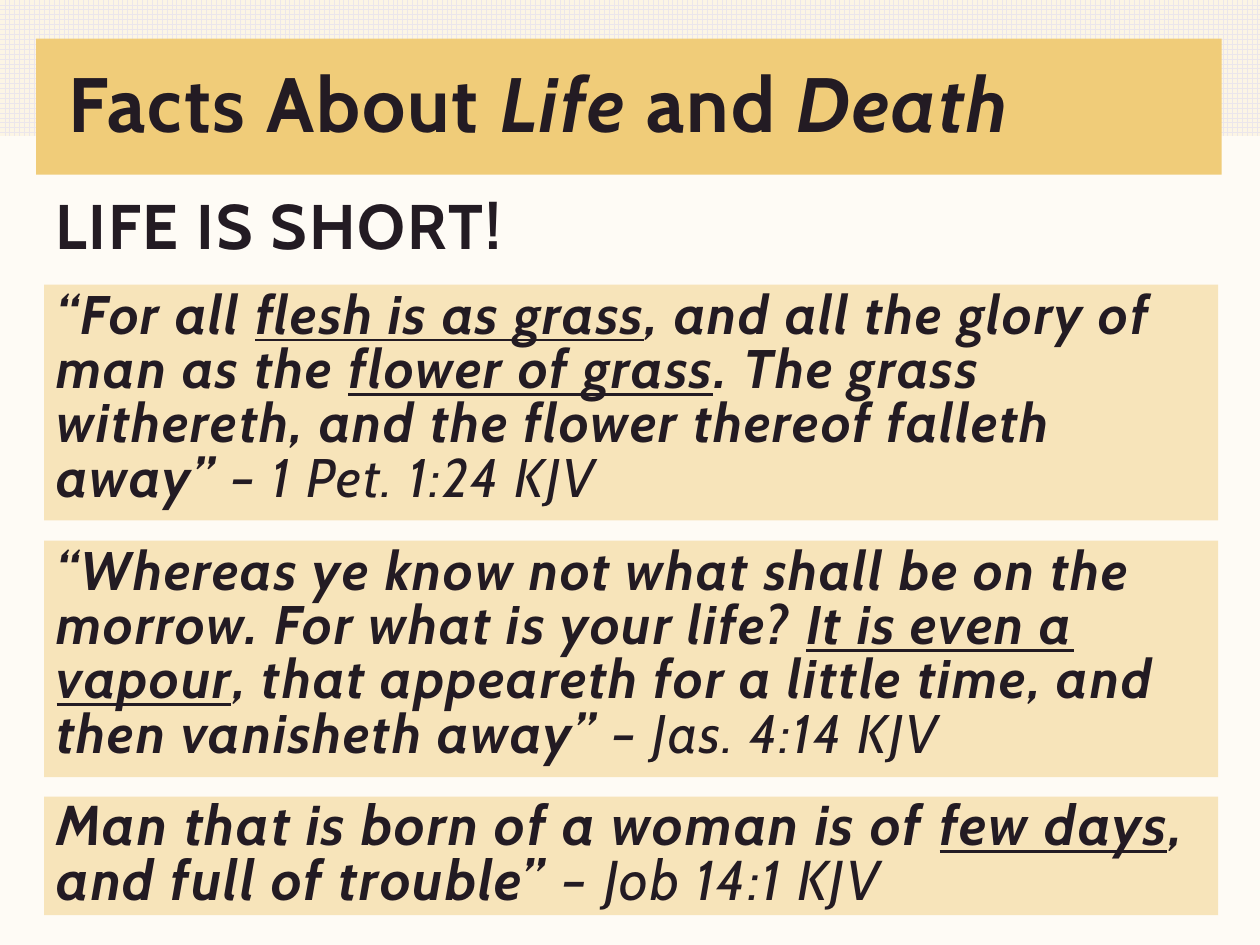
from dataclasses import dataclass

from pptx import Presentation
from pptx.dml.color import RGBColor
from pptx.enum.dml import MSO_PATTERN
from pptx.enum.shapes import MSO_SHAPE
from pptx.enum.text import MSO_ANCHOR, MSO_AUTO_SIZE, PP_ALIGN
from pptx.util import Cm, Pt


@dataclass(frozen=True)
class Theme:
    font: str = "Cabin"
    ink: str = "231B23"
    page: str = "FEFBF5"
    grid: str = "EBE6EB"
    cream: str = "FCF5E5"
    gold: str = "F0CC79"
    sand: str = "F7E4BA"
    title: int = 44
    head: int = 36
    verse: int = 31
    large: int = 32
    track: int = 110


THEME = Theme()

BOLD = {"bold": True}
SLANT = {"bold": True, "italic": True}
LINED = {**SLANT, "underline": True}
CITE = {"bold": False, "italic": True}

TITLE = [("Facts About ", BOLD), ("Life", SLANT), (" and ", BOLD), ("Death", SLANT)]
HEAD = [("LIFE IS SHORT!", BOLD)]

# top, height, type size, runs
VERSES = [
    (5.74, 4.75, THEME.verse, [
        ("“For all ", SLANT),
        ("flesh is as grass", LINED),
        (", and all the glory of man as the ", SLANT),
        ("flower of grass", LINED),
        (". The grass withereth, and the flower thereof falleth away” ", SLANT),
        ("– 1 Pet. 1:24 KJV", CITE),
    ]),
    (10.9, 4.77, THEME.verse, [
        ("“Whereas ye know not what shall be on the morrow. "
         "For what is your life? ", SLANT),
        ("It is even a vapour", LINED),
        (", that appeareth for a little time, and then vanisheth away” ", SLANT),
        ("– Jas. 4:14 KJV", CITE),
    ]),
    (16.06, 2.39, THEME.large, [
        ("Man that is born of a woman is of ", SLANT),
        ("few days", LINED),
        (", and full of trouble” ", SLANT),
        ("– Job 14:1 KJV", CITE),
    ]),
]


def tint(name):
    return RGBColor.from_string(name)


def assign(item, values):
    for key, value in values.items():
        setattr(item, key, value)


def write(shape, runs, size, anchor=MSO_ANCHOR.TOP, **layout):
    """Fill a shape with one left-aligned paragraph of styled runs."""
    frame = shape.text_frame
    assign(frame, {"word_wrap": True, "auto_size": MSO_AUTO_SIZE.NONE,
                   "vertical_anchor": anchor})
    para = frame.paragraphs[0]
    assign(para, {"alignment": PP_ALIGN.LEFT, **layout})
    for text, style in runs:
        run = para.add_run()
        run.text = text
        assign(run.font, {"name": THEME.font, "size": Pt(size), **style})
        run.font.color.rgb = tint(THEME.ink)
        run.font._element.set("spc", str(THEME.track))


def panel(slide, box, color):
    shape = slide.shapes.add_shape(MSO_SHAPE.RECTANGLE, *map(Cm, box))
    shape.shadow.inherit = False
    shape.line.fill.background()
    shape.fill.solid()
    shape.fill.fore_color.rgb = tint(color)
    return shape


def weave(shape):
    """Give a shape the fine grid pattern."""
    fill = shape.fill
    fill.patterned()
    fill.pattern = MSO_PATTERN.LARGE_GRID
    fill.fore_color.rgb = tint(THEME.grid)
    fill.back_color.rgb = tint(THEME.cream)


def add_title(slide):
    title = slide.shapes.title
    places = ("left", "top", "width", "height")
    assign(title, dict(zip(places, map(Cm, (1.12, 1.35, 22.71, 1.63)))))
    write(title, TITLE, THEME.title, MSO_ANCHOR.MIDDLE, line_spacing=0.9)
    slide.shapes._spTree.append(title._element)  # in front of the banner


def main():
    deck = Presentation()
    assign(deck, {"slide_width": Cm(25.4), "slide_height": Cm(19.05)})
    slide = deck.slides.add_slide(deck.slide_layouts[5])
    back = slide.background.fill
    back.solid()
    back.fore_color.rgb = tint(THEME.page)

    weave(panel(slide, (0, 0, 25.4, 2.74), THEME.cream))
    panel(slide, (0.73, 0.78, 23.9, 2.74), THEME.gold)
    add_title(slide)

    head = slide.shapes.add_textbox(*map(Cm, (0.86, 4.04, 24.08, 1.6)))
    write(head, HEAD, THEME.head, line_spacing=Pt(32), space_before=Pt(12))
    for top, height, size, runs in VERSES:
        verse = panel(slide, (0.89, top, 23.67, height), THEME.sand)
        write(verse, runs, size, line_spacing=Pt(31), space_before=Pt(11.2))

    deck.save("out.pptx")


if __name__ == "__main__":
    main()
